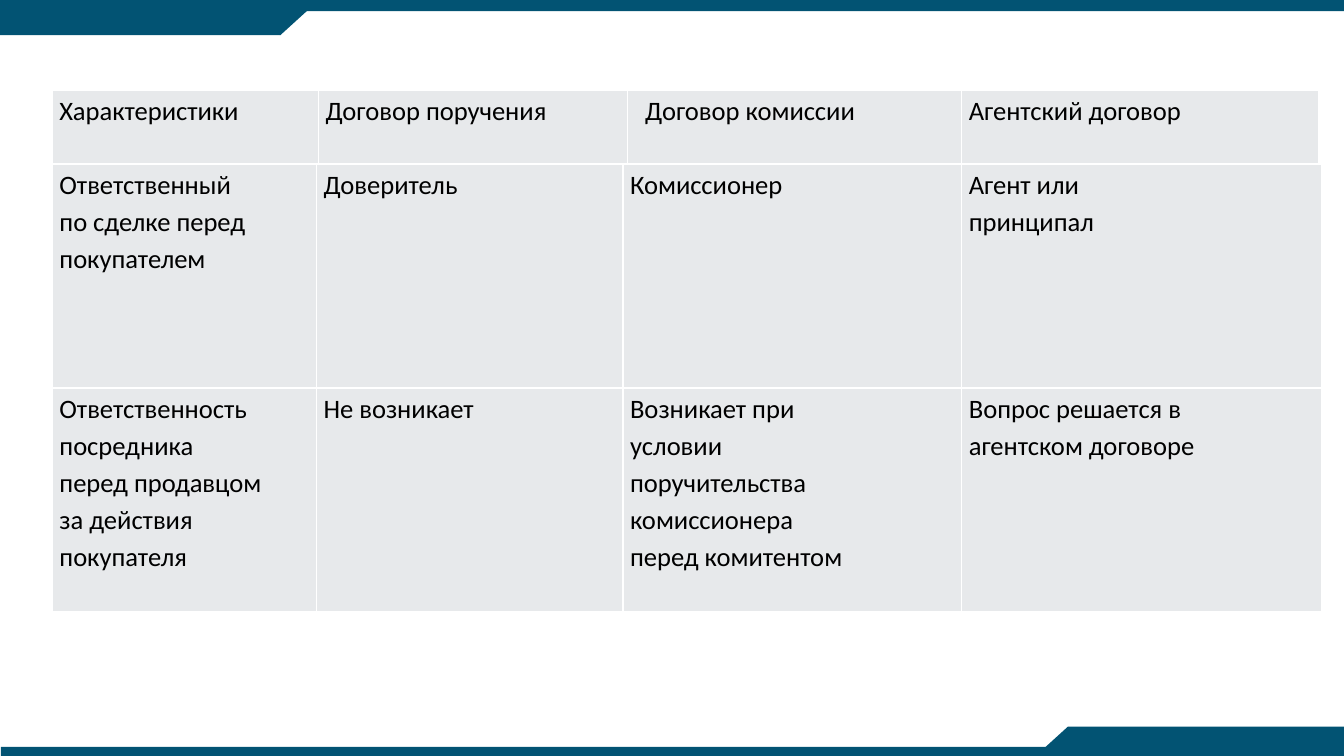
from lxml import etree
from pptx import Presentation
from pptx.dml.color import RGBColor
from pptx.enum.shapes import MSO_SHAPE
from pptx.oxml.ns import qn
from pptx.util import Inches, Pt

RECTANGLE = MSO_SHAPE.RECTANGLE
MERGE = MSO_SHAPE.FLOWCHART_MERGE

TEAL = RGBColor(0x02, 0x53, 0x73)
PALE_GREY = RGBColor(0xE7, 0xE9, 0xEB)
BLACK = RGBColor(0, 0, 0)
WHITE = RGBColor(0xFF, 0xFF, 0xFF)

# Content
HEADINGS = [["Характеристики", "Договор поручения", "Договор комиссии", "Агентский договор"]]
COMPARISON = [
    ["Ответственный\nпо сделке перед\nпокупателем", "Доверитель", "Комиссионер",
     "Агент или\nпринципал"],
    ["Ответственность\nпосредника\nперед продавцом\nза действия\nпокупателя", "Не возникает",
     "Возникает при\nусловии\nпоручительства\nкомиссионера\nперед комитентом",
     "Вопрос решается в\nагентском договоре"],
]

# Layout in inches
WIDTH, HEIGHT = 13.33, 7.5
TABLE_LEFT = 0.52
HEADING_TOP, HEADING_ROW = 0.9, 0.72
HEADING_COLUMNS = [2.64, 3.06, 3.32, 3.54]
COMPARISON_TOP, COMPARISON_ROW = 1.63, 2.22
COMPARISON_COLUMNS = [2.62, 3.04, 3.36, 3.57]
CELL_MARGIN, INDENTED_MARGIN = 0.07, 0.18
BAR, TAB_WIDTH, TAB_HEIGHT, SLANT_WIDTH = 0.11, 2.78, 0.3, 0.66
SLANT_OFFSET = 2.45
TOP_TAB, BOTTOM_TAB, BOTTOM_BAR = 0.05, 7.21, 7.41
BOTTOM_TAB_LEFT, BOTTOM_SLANT_LEFT = 10.59, 10.26

DECORATION = [
    (RECTANGLE, 0, 0, WIDTH, BAR, 0),
    (RECTANGLE, 0.01, BOTTOM_BAR, WIDTH, BAR, 0),
    (RECTANGLE, 0, TOP_TAB, TAB_WIDTH, TAB_HEIGHT, 0),
    (MERGE, SLANT_OFFSET, TOP_TAB, SLANT_WIDTH, TAB_HEIGHT, 0),
    (RECTANGLE, BOTTOM_TAB_LEFT, BOTTOM_TAB, TAB_WIDTH, TAB_HEIGHT, 0),
    (MERGE, BOTTOM_SLANT_LEFT, BOTTOM_TAB, SLANT_WIDTH, TAB_HEIGHT, 180),
]


def add_decoration(slide, kind, left, top, width, height, rotation):
    shape = slide.shapes.add_shape(kind, Inches(left), Inches(top), Inches(width), Inches(height))
    shape.rotation = rotation
    shape.shadow.inherit = False
    shape.fill.solid()
    shape.fill.fore_color.rgb = TEAL
    shape.line.fill.background()


def add_borders(cell):
    properties = cell._tc.get_or_add_tcPr()
    for position, side in enumerate(("lnL", "lnR", "lnT", "lnB")):
        line = etree.Element(qn(f"a:{side}"), w=str(Pt(1)))
        fill = etree.SubElement(line, qn("a:solidFill"))
        etree.SubElement(fill, qn("a:srgbClr"), val=str(WHITE))
        properties.insert(position, line)


def format_cell(cell, text):
    cell.margin_left = cell.margin_right = Inches(CELL_MARGIN)
    cell.margin_top = cell.margin_bottom = 0
    cell.fill.solid()
    cell.fill.fore_color.rgb = PALE_GREY
    add_borders(cell)
    paragraph = cell.text_frame.paragraphs[0]
    paragraph.text = text
    paragraph.line_spacing = 1.15
    paragraph.font.name = "Calibri"
    paragraph.font.size = Pt(19)
    paragraph.font.bold = False
    paragraph.font.color.rgb = BLACK


def add_grid(slide, rows, top, columns, row_height):
    frame = slide.shapes.add_table(
        len(rows), len(columns), Inches(TABLE_LEFT), Inches(top),
        Inches(sum(columns)), Inches(row_height * len(rows)))
    table = frame.table
    table.first_row = table.horz_banding = False
    for column, width in zip(table.columns, columns):
        column.width = Inches(width)
    for row, texts in zip(table.rows, rows):
        row.height = Inches(row_height)
        for cell, text in zip(row.cells, texts):
            format_cell(cell, text)
    return table


def main():
    presentation = Presentation()
    presentation.slide_width = Inches(WIDTH)
    presentation.slide_height = Inches(HEIGHT)
    slide = presentation.slides.add_slide(presentation.slide_layouts[6])

    # Top and bottom bands
    for part in DECORATION:
        add_decoration(slide, *part)

    # Comparison rows, then the heading row above them
    add_grid(slide, COMPARISON, COMPARISON_TOP, COMPARISON_COLUMNS, COMPARISON_ROW)
    headings = add_grid(slide, HEADINGS, HEADING_TOP, HEADING_COLUMNS, HEADING_ROW)
    headings.cell(0, 2).margin_left = Inches(INDENTED_MARGIN)

    presentation.save("out.pptx")


if __name__ == "__main__":
    main()
